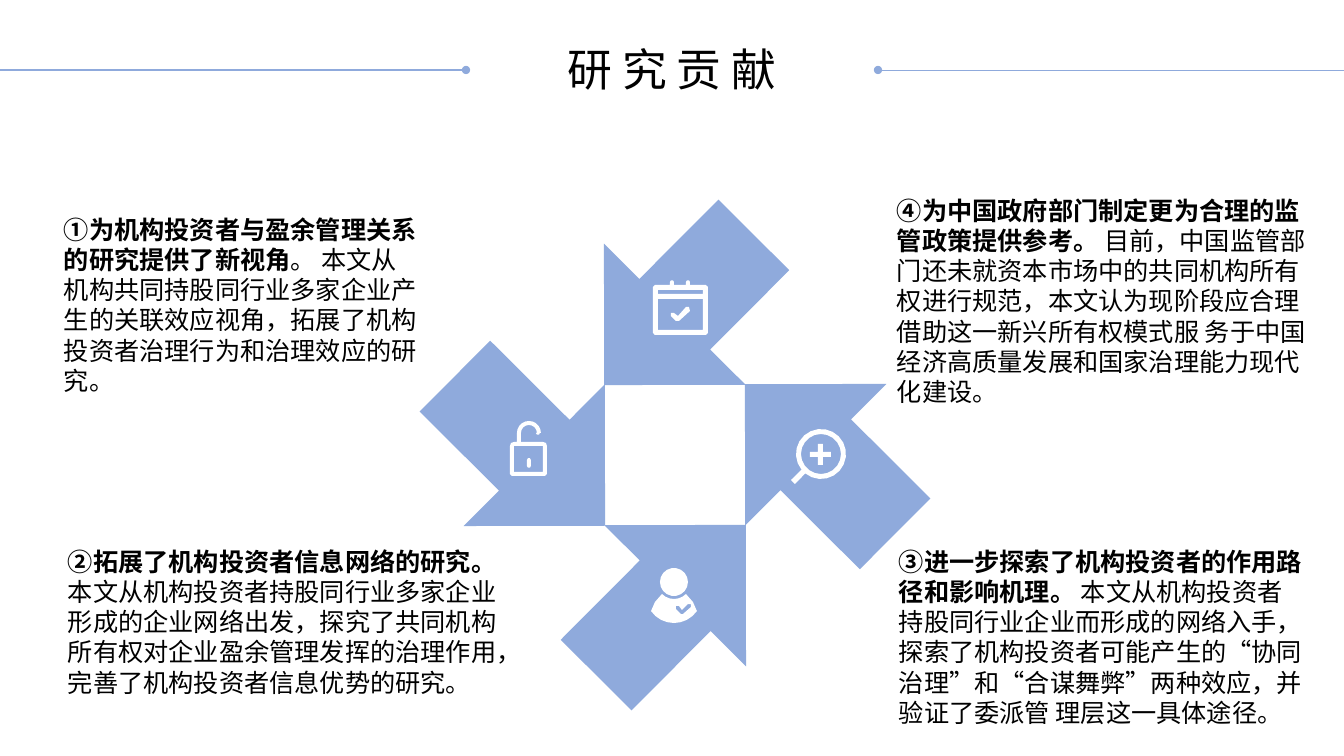
from math import cos, radians, sin

from lxml import etree
from pptx import Presentation
from pptx.dml.color import RGBColor
from pptx.enum.shapes import MSO_CONNECTOR, MSO_SHAPE
from pptx.enum.text import MSO_ANCHOR, MSO_AUTO_SIZE, PP_ALIGN
from pptx.oxml.ns import qn
from pptx.util import Pt

STRAIGHT = MSO_CONNECTOR.STRAIGHT
RIGHT_ARROW = MSO_SHAPE.RIGHT_ARROW
TOP = MSO_ANCHOR.TOP
FIT_SHAPE = MSO_AUTO_SIZE.SHAPE_TO_FIT_TEXT
CENTER = PP_ALIGN.CENTER

SLIDE_W, SLIDE_H = 1344, 756
PX = 12192000 / SLIDE_W
FONT = "Noto Sans CJK SC"
COLORS = {"blue": "8FAADC", "icon": "FFFFFF", "text": "000000"}


def add_run(paragraph, text, size, bold=False):
    run = paragraph.add_run()
    run.text = text
    run.font.size = Pt(size)
    run.font.bold = bold
    run.font.name = FONT
    run.font.color.rgb = RGBColor.from_string(COLORS["text"])
    etree.SubElement(run._r.get_or_add_rPr(), qn("a:ea"), typeface=FONT)


def arc(cx, cy, radius, start, end, steps):
    """Points along an arc; degrees run clockwise from the right."""
    angles = [radians(start + (end - start) * i / steps) for i in range(steps + 1)]
    return [(cx + radius * cos(a), cy + radius * sin(a)) for a in angles]


prs = Presentation()
prs.slide_width, prs.slide_height = round(SLIDE_W * PX), round(SLIDE_H * PX)
slide = prs.slides.add_slide(prs.slide_layouts[5])
shapes = slide.shapes

# Title between two dotted rules
title = shapes.title
title.left, title.top, title.width, title.height = [round(v * PX) for v in (539, 37, 266, 65)]
title.text_frame.word_wrap = False
title.text_frame.auto_size = FIT_SHAPE
title.text_frame.vertical_anchor = TOP
title_line = title.text_frame.paragraphs[0]
title_line.alignment = CENTER
add_run(title_line, "研 究 贡 献", 32)

for start, end, weight, dot_end in [(0, 466, 1, "a:tailEnd"), (878, SLIDE_W, 0.5, "a:headEnd")]:
    rule = shapes.add_connector(
        STRAIGHT, round(start * PX), round(70 * PX), round(end * PX), round(70 * PX))
    rule.line.color.rgb = RGBColor.from_string(COLORS["blue"])
    rule.line.width = Pt(weight)
    etree.SubElement(rule.line._get_or_add_ln(), qn(dot_end), type="oval")
    etree.SubElement(rule._element.spPr, qn("a:effectLst"))

# Pinwheel: each arrow is the previous one turned by a quarter
dx, dy = -4, 145
for rotation in (314.9, 44.9, 134.9, 224.9):
    arrow = shapes.add_shape(
        RIGHT_ARROW, round((569 + dx) * PX), round((355 + dy) * PX),
        round(212 * PX), round(200 * PX))
    arrow.rotation = rotation
    arrow.shadow.inherit = False
    arrow.fill.solid()
    arrow.fill.fore_color.rgb = RGBColor.from_string(COLORS["blue"])
    arrow.line.fill.background()
    dx, dy = -dy, dx

# Icons: inner contours cut holes in the outer ones
open_lock = [
    [(517, 442), *arc(529, 433, 12, 180, 360, 10), *arc(538, 433, 2, 0, 180, 3),
     *arc(529, 433, 8, 360, 180, 8), (521, 442)],
    [(514, 442), (543, 442), (546, 443), (547, 446), (547, 474), (545, 476),
     (512, 476), (510, 474), (510, 446), (511, 443)],
    [(514, 446), (543, 446), (543, 472), (514, 472)],
    [*arc(529, 460, 2, 180, 360, 3), *arc(529, 466, 2, 0, 180, 3)],
]
magnifier = [
    [*arc(821, 454, 25, 141, 489, 20), (795, 484), (791, 480)],
    arc(821, 454, 20, 0, 342, 19),
    [(818, 444), (823, 444), (823, 452), (831, 452), (831, 457), (823, 457),
     (823, 465), (818, 465), (818, 457), (810, 457), (810, 452), (818, 452)],
]
approved_user = [
    arc(674, 582, 14, 0, 340, 17),
    [*arc(674, 595, 28, 35, 145, 8), (655, 602), *arc(674, 582, 17, 135, 45, 6), (693, 602)],
    [(683, 614), (691, 607), (691, 604), (688, 604), (682, 610), (679, 606),
     (676, 606), (676, 609), (681, 614)],
]
calendar = [
    [(655, 285), (706, 285), (708, 287), (708, 333), (706, 335),
     (655, 335), (653, 333), (653, 287)],
    [(658, 290), (703, 290), (703, 294), (658, 294)],
    [(658, 299), (703, 299), (703, 330), (658, 330)],
    [(689, 307), (690, 311), (679, 321), (676, 321), (671, 316), (671, 313),
     (674, 313), (678, 316), (686, 307)],
]
for ring_x in (672, 688):
    calendar.append([(ring_x - 2, 285), *arc(ring_x, 282, 2, 180, 360, 3), (ring_x + 2, 285)])

for contours in (open_lock, magnifier, approved_user, calendar):
    first_x, first_y = contours[0][0]
    outline = shapes.build_freeform(round(first_x * PX), round(first_y * PX))
    for contour in contours:
        points = [(round(x * PX), round(y * PX)) for x, y in contour]
        if contour is not contours[0]:
            outline.move_to(*points[0])
        outline.add_line_segments(points[1:], close=True)
    icon = outline.convert_to_shape()
    icon.shadow.inherit = False
    icon.fill.solid()
    icon.fill.fore_color.rgb = RGBColor.from_string(COLORS["icon"])
    icon.line.fill.background()

# Four contributions: box, bold lead, explanation
contributions = [
    ((54, 209, 377, 194), "①为机构投资者与盈余管理关系的研究提供了新视角",
     "。 本文从机构共同持股同行业多家企业产生的关联效应视角，拓展了机构投资者治理行为和治理效应的研究。"),
    ((58, 541, 469, 162), "②拓展了机构投资者信息网络的研究。",
     "本文从机构投资者持股同行业多家企业形成的企业网络出发，探究了共同机构所有权对企业盈余管理发挥的治理作用，"
     "完善了机构投资者信息优势的研究。"),
    ((889, 541, 425, 194), "③进一步探索了机构投资者的作用路径和影响机理。",
     " 本文从机构投资者持股同行业企业而形成的网络入手，探索了机构投资者可能产生的“协同治理”和“合谋舞弊”两种效应，"
     "并验证了委派管 理层这一具体途径。"),
    ((887, 190, 445, 224), "④为中国政府部门制定更为合理的监管政策提供参考。",
     " 目前，中国监管部门还未就资本市场中的共同机构所有权进行规范，本文认为现阶段应合理借助这一新兴所有权模式服 "
     "务于中国经济高质量发展和国家治理能力现代化建设。"),
]
for box, lead, explanation in contributions:
    frame = shapes.add_textbox(*[round(v * PX) for v in box]).text_frame
    frame.word_wrap = True
    frame.auto_size = FIT_SHAPE
    add_run(frame.paragraphs[0], lead, 18, bold=True)
    add_run(frame.paragraphs[0], explanation, 18)

prs.save("out.pptx")
